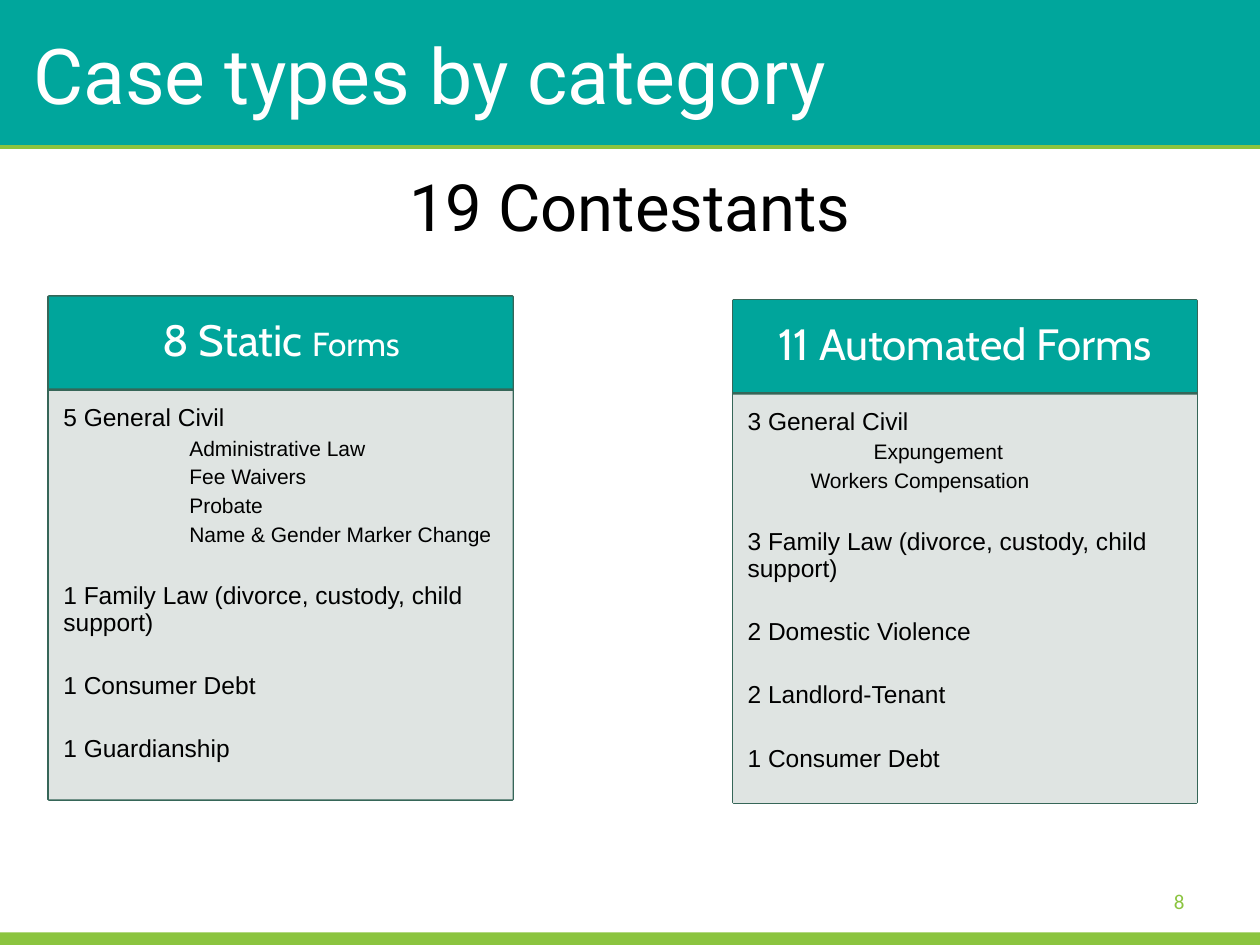
from lxml.etree import SubElement
from pptx import Presentation
from pptx.dml.color import RGBColor
from pptx.enum.shapes import MSO_CONNECTOR, MSO_SHAPE
from pptx.enum.text import MSO_ANCHOR, PP_ALIGN
from pptx.oxml.ns import qn
from pptx.util import Pt

TEAL, GREEN, PINE = "00A69C", "8BC43F", "366658"
WHITE, BLACK, GRAY = "FFFFFF", "000000", "F2F2F2"


def paint(color, code):
    color.rgb = RGBColor.from_string(code)


class Deck:
    main, head, body, small = "Roboto", "Cabin", "Arial", "Calibri"

    def __init__(self, width, height):
        self.prs = Presentation()
        self.prs.slide_width, self.prs.slide_height = Pt(width), Pt(height)
        self.slide = self.prs.slides.add_slide(self.prs.slide_layouts[6])

    def rect(self, box, fill, line=None, alpha=None):
        shape = self.slide.shapes.add_shape(MSO_SHAPE.RECTANGLE, *map(Pt, box))
        shape.shadow.inherit = False
        shape.fill.solid()
        paint(shape.fill.fore_color, fill)
        if alpha:
            color = shape.fill._xPr.find(qn("a:solidFill"))[0]
            SubElement(color, qn("a:alpha")).set("val", str(alpha * 1000))
        if line:
            paint(shape.line.color, line)
            shape.line.width = Pt(1.75)
        else:
            shape.line.fill.background()
        return shape

    def rule(self, y, width, color, weight):
        line = self.slide.shapes.add_connector(
            MSO_CONNECTOR.STRAIGHT, 0, Pt(y), Pt(width), Pt(y))
        paint(line.line.color, color)
        line.line.width = Pt(weight)
        SubElement(line._element.spPr, qn("a:effectLst"))

    def frame(self, shape, pads, anchor):
        frame = shape.text_frame
        frame.word_wrap = True
        frame.vertical_anchor = anchor
        (frame.margin_left, frame.margin_top,
         frame.margin_right, frame.margin_bottom) = map(Pt, pads)
        return frame

    def style(self, para, font, color, size=None, align=PP_ALIGN.LEFT, space=0.9):
        para.alignment = align
        para.line_spacing = space
        para.font.name = font
        paint(para.font.color, color)
        if size:
            para.font.size = Pt(size)

    def label(self, box, text, font, size, color, align=PP_ALIGN.LEFT,
              anchor=MSO_ANCHOR.MIDDLE, space=1.0):
        shape = self.slide.shapes.add_textbox(*map(Pt, box))
        para = self.frame(shape, (7.2, 3.6, 7.2, 3.6), anchor).paragraphs[0]
        para.text = text
        self.style(para, font, color, size, align, space)

    def card(self, left, top, title, items):
        width, height, band, drop = 265, 287.3, 52.5, 54
        self.rect((left, top, width, height), PINE, PINE)
        shape = self.rect((left, top, width, band), "00A59B")
        para = self.frame(shape, (11, 6, 11, 6), MSO_ANCHOR.MIDDLE).paragraphs[0]
        self.style(para, self.head, WHITE, align=PP_ALIGN.CENTER)
        for text, size in title:
            run = para.add_run()
            run.text = text
            run.font.size = Pt(size)
        shape = self.rect((left, top + drop, width, height - drop), GRAY, alpha=90)
        frame = self.frame(shape, (8.2, 8.2, 11, 12), MSO_ANCHOR.TOP)
        for num, (text, inset) in enumerate(items):
            para = frame.add_paragraph() if num else frame.paragraphs[0]
            para.text = text
            if inset:
                para._p.get_or_add_pPr().set("indent", str(Pt(inset)))
            if num:
                para.space_before = Pt(3.5 if inset else 21)
            self.style(para, self.body, BLACK, 12 if inset else 14)


deck = Deck(720, 540)
deck.rect((0, 532.8, 720, 7.2), GREEN)
deck.rect((0, 0, 720, 84), TEAL)
deck.rule(84, 720, GREEN, 2.25)
deck.label((12, 0, 696, 84), "Case types by category", deck.main, 44, WHITE)
deck.label((654, 500.5, 30, 29), "8", deck.small, 12, GREEN, PP_ALIGN.RIGHT)
deck.label((36, 96.5, 648, 62.5), "19 Contestants", deck.main, 37.2, BLACK,
           PP_ALIGN.CENTER, MSO_ANCHOR.TOP, 0.9)
family = ("Family Law (divorce, custody, child support)")
deck.card(28, 169.5, [("8 Static ", 25), ("Forms", 19)], [
    ("5 General Civil", 0),
    ("Administrative Law", 72),
    ("Fee Waivers", 72),
    ("Probate", 72),
    ("Name & Gender Marker Change", 72),
    ("1 " + family, 0),
    ("1 Consumer Debt", 0),
    ("1 Guardianship", 0),
])
deck.card(419, 171.5, [("11 Automated Forms", 25)], [
    ("3 General Civil", 0),
    ("Expungement", 72),
    ("Workers Compensation", 36),
    ("3 " + family, 0),
    ("2 Domestic Violence", 0),
    ("2 Landlord-Tenant", 0),
    ("1 Consumer Debt", 0),
])
deck.prs.save("out.pptx")
